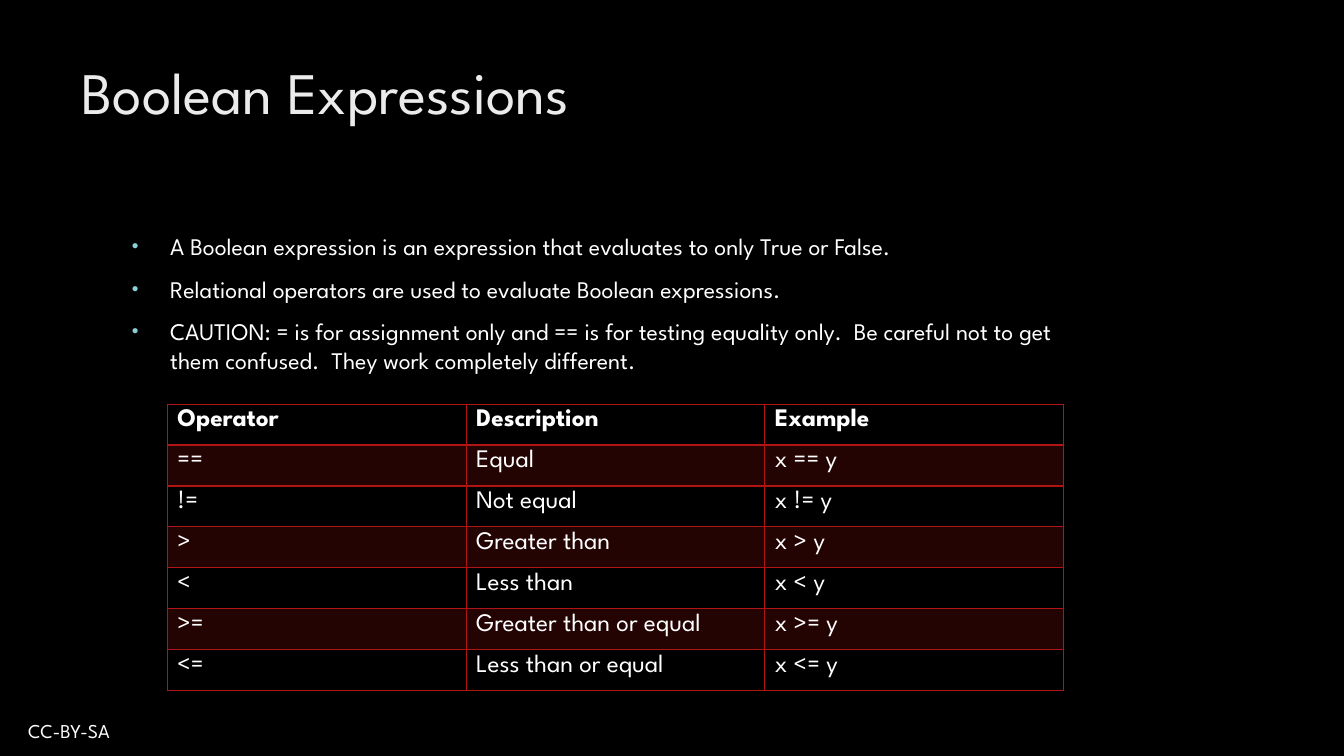
from dataclasses import dataclass

from lxml import etree
from pptx import Presentation
from pptx import util as u
from pptx.dml.color import RGBColor
from pptx.enum import text
from pptx.oxml import ns


@dataclass(frozen=True)
class Theme:
    """Colours, type sizes and font of the deck."""
    font: str = "League Spartan"
    background: str = "000000"
    title: str = "EBEBEB"
    body: str = "FFFFFF"
    bullet: str = "8AD0D6"
    accent: str = "B01513"
    title_size: int = 42
    body_size: int = 17
    table_size: int = 18
    footer_size: int = 14


THEME = Theme()
POINTS = [
    "A Boolean expression is an expression that evaluates to only True or False.",
    "Relational operators are used to evaluate Boolean expressions.",
    "CAUTION: = is for assignment only and == is for testing equality only.  "
    "Be careful not to get them confused.  They work completely different.",
]
OPERATORS = [
    ("==", "Equal"),
    ("!=", "Not equal"),
    (">", "Greater than"),
    ("<", "Less than"),
    (">=", "Greater than or equal"),
    ("<=", "Less than or equal"),
]


def inches(*lengths):
    """Convert several lengths in inches."""
    return [u.Inches(length) for length in lengths]


def child(parent, tag, **attributes):
    """Append a drawing element to a parent."""
    return etree.SubElement(parent, ns.qn(tag), attributes)


def add_run(p, words, size, color, bold=False):
    """Add one formatted run to a paragraph."""
    r = p.add_run()
    r.text = words
    r.font.name = THEME.font
    r.font.size = u.Pt(size)
    r.font.bold = bold
    r.font.color.rgb = RGBColor.from_string(color)


def add_title(s, box, words):
    """Place the title placeholder in its box."""
    sp = s.shapes.title
    sp.left, sp.top, sp.width, sp.height = inches(*box)
    tf = sp.text_frame
    tf.auto_size = text.MSO_AUTO_SIZE.NONE
    tf.vertical_anchor = text.MSO_ANCHOR.TOP
    p = tf.paragraphs[0]
    p.alignment = text.PP_ALIGN.LEFT
    add_run(p, words, THEME.title_size, THEME.title)


def add_bullet(p):
    """Give a paragraph a hanging coloured bullet."""
    pPr = p._p.get_or_add_pPr()
    indent = u.Inches(0.38)
    pPr.set("marL", str(indent))
    pPr.set("indent", str(-indent))
    child(child(pPr, "a:buClr"), "a:srgbClr", val=THEME.bullet)
    child(pPr, "a:buSzPct", val="80000")
    child(pPr, "a:buFont", typeface="Arial")
    child(pPr, "a:buChar", char="•")


def add_points(s, box, points):
    """Write the bulleted points in a box."""
    tf = s.shapes.add_textbox(*inches(*box)).text_frame
    tf.word_wrap = True
    for i, point in enumerate(points):
        p = tf.paragraphs[0] if i == 0 else tf.add_paragraph()
        add_bullet(p)
        if i:
            p.space_before = u.Pt(10)
        add_run(p, point, THEME.body_size, THEME.body)


def style_cell(cell, row):
    """Set the band fill and borders of a cell."""
    if row % 2:
        cell.fill.solid()
        cell.fill.fore_color.rgb = RGBColor.from_string(THEME.accent)
    else:
        cell.fill.background()
    tcPr = cell._tc.get_or_add_tcPr()
    for color in tcPr.iter(ns.qn("a:srgbClr")):
        child(color, "a:alpha", val="20000")
    for i, side in enumerate(("L", "R", "T", "B")):
        thick = (side == "B" and row == 0) or (side == "T" and row == 1)
        line = etree.Element(ns.qn(f"a:ln{side}"), w=str(u.Pt(2 if thick else 1)))
        child(child(line, "a:solidFill"), "a:srgbClr", val=THEME.accent)
        tcPr.insert(i, line)


def add_operator_table(s, box, operators):
    """Build the table of relational operators in a box."""
    rows = [("Operator", "Description", "Example")]
    rows += [(sign, name, f"x {sign} y") for sign, name in operators]
    left, top, width, height = inches(*box)
    table = s.shapes.add_table(len(rows), 3, left, top, width, height).table
    table.horz_banding = False
    for column in table.columns:
        column.width = width // 3
    for i, values in enumerate(rows):
        table.rows[i].height = height // len(rows)
        for j, value in enumerate(values):
            cell = table.cell(i, j)
            style_cell(cell, i)
            add_run(cell.text_frame.paragraphs[0], value, THEME.table_size, THEME.body, i == 0)


def add_footer(s, box, words):
    """Write the licence line in a box."""
    tf = s.shapes.add_textbox(*inches(*box)).text_frame
    tf.word_wrap = True
    add_run(tf.paragraphs[0], words, THEME.footer_size, THEME.body)


def main():
    """Build and save the slide."""
    prs = Presentation()
    prs.slide_width, prs.slide_height = inches(13.33, 7.5)
    s = prs.slides.add_slide(prs.slide_layouts[5])
    s.background.fill.solid()
    s.background.fill.fore_color.rgb = RGBColor.from_string(THEME.background)
    add_footer(s, (0.18, 7.08, 5.67, 0.34), "CC-BY-SA")
    add_title(s, (0.71, 0.5, 10.29, 1.53), "Boolean Expressions")
    add_points(s, (1.21, 2.25, 9.78, 1.53), POINTS)
    add_operator_table(s, (1.66, 4.01, 8.89, 2.84), OPERATORS)
    prs.save("out.pptx")


if __name__ == "__main__":
    main()
